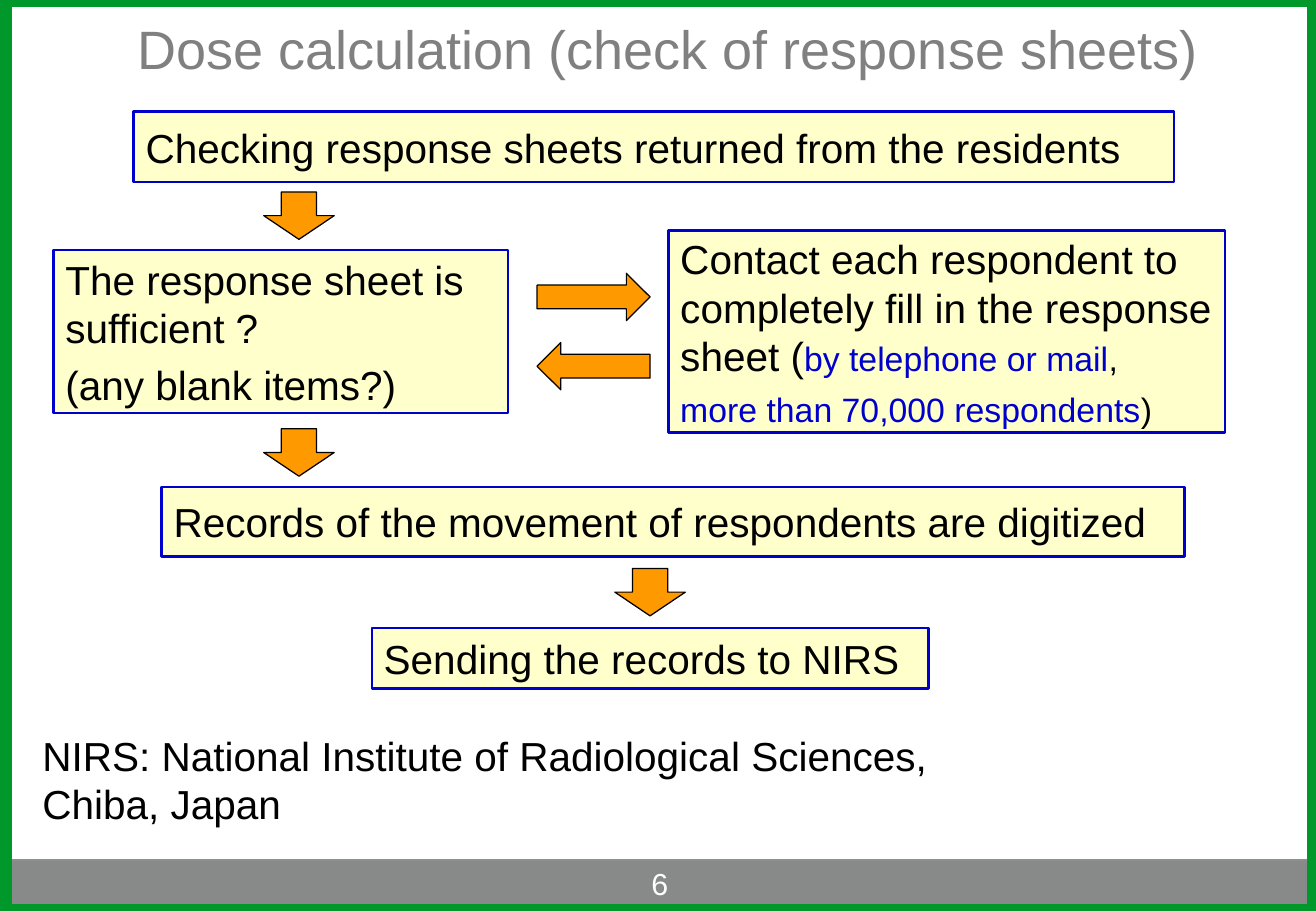
from pptx import Presentation
from pptx import util as u
from pptx.dml.color import RGBColor
from pptx.enum import shapes, text

FONT = "Arial"
COLORS = {
    "green": "00972B", "bar": "888A89", "bar_line": "8E908F",
    "title": "808080", "cream": "FFFFCC", "blue": "0000CC",
    "orange": "FF9900", "black": "000000", "white": "FFFFFF",
}
WIDTH, HEIGHT = u.Inches(10.83), u.Inches(7.5)
DOWN_SIZE = (5.36, 5.2)
SIDE_SIZE = (8.59, 5.2)

# Places are percent of slide width and height: left, top, width, height
STEPS = [
    ((12.28, 53.47, 77.75, 7.6),
     [[("Records of the movement of respondents are digitized", 24, "black")]]),
    ((4.06, 27.47, 34.53, 17.87),
     [[("The response sheet is sufficient ?", 24, "black")],
      [("(any blank items?)", 24, "black")]]),
    ((28.25, 68.93, 42.29, 6.67),
     [[("Sending the records to NIRS", 24, "black")]]),
    ((10.16, 12.27, 79.04, 7.73),
     [[("Checking response sheets returned from the residents", 24, "black")]]),
    ((50.78, 25.33, 42.29, 22.13),
     [[("Contact each respondent to completely fill in the response sheet (",
        24, "black"),
       ("by telephone or mail", 20, "blue"), (",", 20, "black")],
      [("more than 70,000 respondents", 20, "blue"), (")", 20, "black")]]),
]


def color(name):
    return RGBColor.from_string(COLORS[name])


def place(box):
    """Turn percent shares into slide lengths."""
    return [int(share * side / 100)
            for share, side in zip(box, (WIDTH, HEIGHT) * 2)]


def write(sp, paragraphs, align=text.PP_ALIGN.LEFT):
    tf = sp.text_frame
    tf.word_wrap = True
    tf.auto_size = text.MSO_AUTO_SIZE.NONE
    tf.vertical_anchor = text.MSO_ANCHOR.MIDDLE
    for i, runs in enumerate(paragraphs):
        p = tf.add_paragraph() if i else tf.paragraphs[0]
        p.alignment = align
        p.space_before = u.Pt(5 if i else 0)
        for words, size, ink in runs:
            r = p.add_run()
            r.text = words
            r.font.name, r.font.size = FONT, u.Pt(size)
            r.font.color.rgb = color(ink)


def add_shape(s, kind, box, fill, line, weight):
    sp = s.shapes.add_shape(kind, *place(box))
    sp.shadow.inherit = False
    if fill:
        sp.fill.solid()
        sp.fill.fore_color.rgb = color(fill)
    else:
        sp.fill.background()
    sp.line.color.rgb = color(line)
    sp.line.width = u.Pt(weight)
    return sp


def add_text(s, box, words, size, ink, align=text.PP_ALIGN.LEFT):
    write(s.shapes.add_textbox(*place(box)), [[(words, size, ink)]], align)


def add_arrow(s, kind, left, top, size, rotation=0):
    sp = add_shape(s, kind, (left, top, *size), "orange", "black", 0.75)
    sp.rotation = rotation


def main():
    prs = Presentation()
    prs.slide_width, prs.slide_height = WIDTH, HEIGHT
    s = prs.slides.add_slide(prs.slide_layouts[5])
    kinds = shapes.MSO_SHAPE

    # Footer bar and frame
    add_shape(s, kinds.RECTANGLE, (0, 94.4, 99.9, 5.6), "bar", "bar_line", 0.75)
    add_shape(s, kinds.RECTANGLE, (0.37, 0, 99.44, 100), None, "green", 8)

    # Title, slide number and note
    title = s.shapes.title
    title.left, title.top, title.width, title.height = place(
        (1.94, 1.07, 97.69, 8.4))
    write(title, [[("Dose calculation (check of response sheets)", 32, "title")]],
          text.PP_ALIGN.CENTER)
    add_text(s, (39.7, 93.73, 20.87, 6.4), "6", 18, "white",
             text.PP_ALIGN.CENTER)
    add_text(s, (2.31, 81.07, 71.56, 8.93),
             "NIRS: National Institute of Radiological Sciences, Chiba, Japan",
             24, "black")

    # Flow steps
    for box, paragraphs in STEPS:
        write(add_shape(s, kinds.RECTANGLE, box, "cream", "blue", 1.5),
              paragraphs)

    # Arrows between steps
    for left, top in ((20.04, 21.07), (20.04, 47.07), (46.72, 62.4)):
        add_arrow(s, kinds.DOWN_ARROW, left, top, DOWN_SIZE)
    for top, rotation in ((30, 0), (37.6, 180)):
        add_arrow(s, kinds.RIGHT_ARROW, 40.81, top, SIDE_SIZE, rotation)

    prs.save("out.pptx")


if __name__ == "__main__":
    main()
